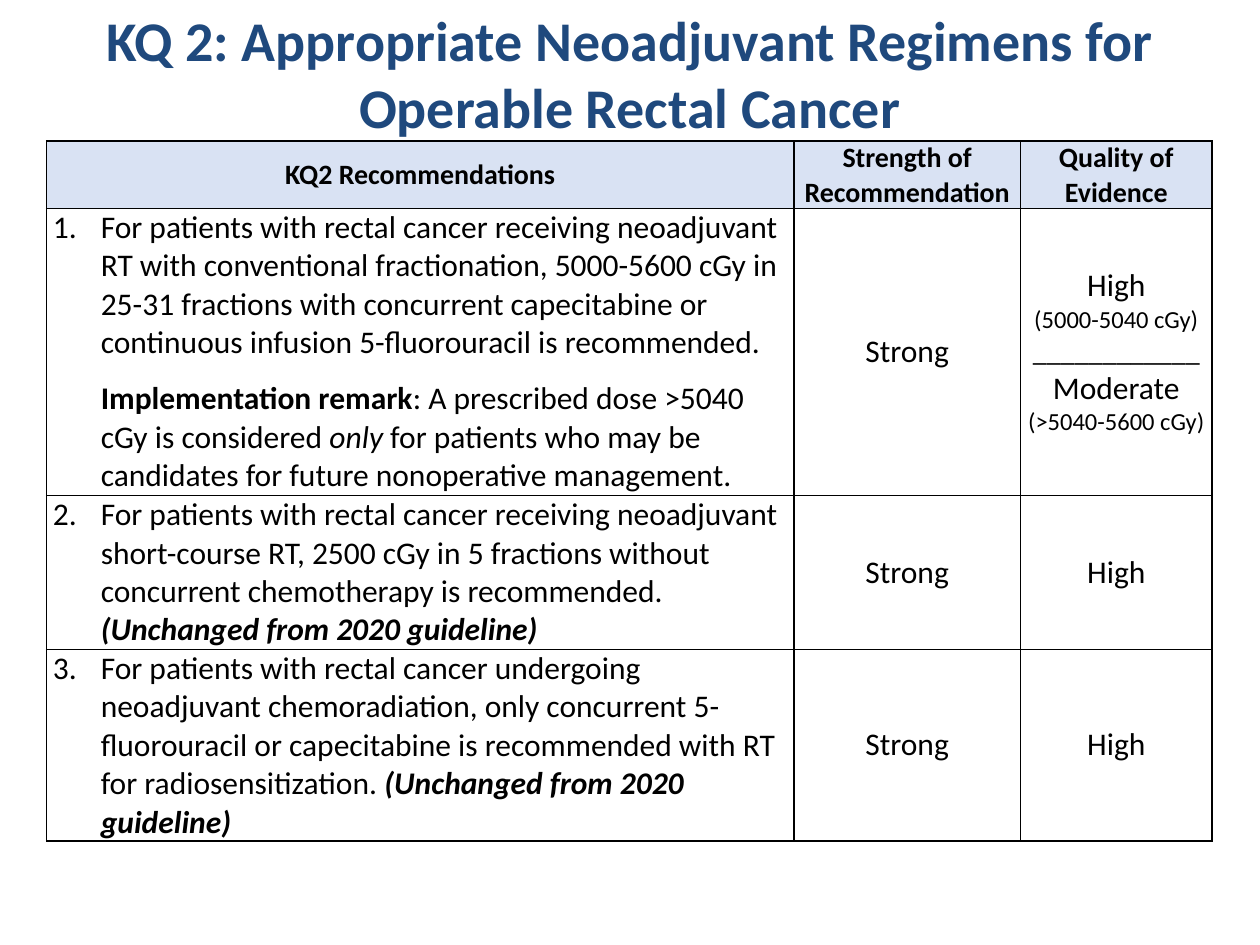
import pptx
import pptx.dml.color
import pptx.enum.text
import pptx.util
from lxml import etree
from pptx.oxml.ns import qn

Inches = pptx.util.Inches
Pt = pptx.util.Pt
CENTER = pptx.enum.text.PP_ALIGN.CENTER
LEFT = pptx.enum.text.PP_ALIGN.LEFT
MIDDLE = pptx.enum.text.MSO_ANCHOR.MIDDLE
TOP = pptx.enum.text.MSO_ANCHOR.TOP


def color(value):
    return pptx.dml.color.RGBColor.from_string(value)


class SlideBuilder:
    font = "Calibri"
    navy, black, header_fill = "1F497D", "000000", "D9E2F3"
    body_size, header_size = 18, 16

    def __init__(self, slide):
        self.slide = slide

    def add_span(self, para, text, size, ink=black, bold=False, italic=False):
        span = para.add_run()
        span.text = text
        span.font.name = self.font
        span.font.size = Pt(size)
        span.font.bold = bold
        span.font.italic = italic
        span.font.color.rgb = color(ink)

    def add_title(self, text, left, top, width, height):
        box = self.slide.shapes.add_textbox(
            Inches(left), Inches(top), Inches(width), Inches(height))
        frame = box.text_frame
        frame.word_wrap = True
        frame.vertical_anchor = MIDDLE
        para = frame.paragraphs[0]
        para.alignment = CENTER
        self.add_span(para, text, 32, self.navy, bold=True)

    def add_table(self, left, top, widths, heights):
        frame = self.slide.shapes.add_table(
            len(heights), len(widths), Inches(left), Inches(top),
            Inches(sum(widths)), Inches(sum(heights)))
        table = frame.table
        table.horz_banding = False
        for column, width in zip(table.columns, widths):
            column.width = Inches(width)
        for row, height in zip(table.rows, heights):
            row.height = Inches(height)
        return table

    def style_cell(self, cell, anchor=MIDDLE, fill=None):
        cell.margin_left = cell.margin_right = Inches(0.05)
        cell.margin_top = cell.margin_bottom = 0
        cell.vertical_anchor = anchor
        properties = cell._tc.get_or_add_tcPr()
        for side in ("a:lnL", "a:lnR", "a:lnT", "a:lnB"):
            line = etree.SubElement(properties, qn(side), w=str(Pt(1)))
            solid = etree.SubElement(line, qn("a:solidFill"))
            etree.SubElement(solid, qn("a:srgbClr"), val=self.black)
        if fill:
            cell.fill.solid()
            cell.fill.fore_color.rgb = color(fill)
        else:
            cell.fill.background()

    def fill_centered(self, cell, lines, bold=False, fill=None):
        self.style_cell(cell, fill=fill)
        frame = cell.text_frame
        for index, (text, size) in enumerate(lines):
            para = frame.add_paragraph() if index else frame.paragraphs[0]
            para.alignment = CENTER
            self.add_span(para, text, size, bold=bold)

    def fill_recommendation(self, cell, number, paragraphs):
        self.style_cell(cell, TOP)
        frame = cell.text_frame
        for index, spans in enumerate(paragraphs):
            para = frame.add_paragraph() if index else frame.paragraphs[0]
            para.alignment = LEFT
            properties = para._p.get_or_add_pPr()
            properties.set("marL", str(Inches(0.38)))
            if index:
                properties.set("indent", "0")
                para.space_before = Pt(10)
            else:
                properties.set("indent", str(Inches(-0.38)))
                etree.SubElement(properties, qn("a:buFont"), typeface="+mj-lt")
                etree.SubElement(properties, qn("a:buAutoNum"),
                                 type="arabicPeriod", startAt=str(number))
            for text, bold, italic in spans:
                self.add_span(para, text, self.body_size, bold=bold, italic=italic)


UNCHANGED = ("(Unchanged from 2020 guideline)", True, True)
HEADERS = ["KQ2 Recommendations", "Strength of Recommendation", "Quality of Evidence"]
HIGH = [("High", 18)]

# Each row: paragraphs of (text, bold, italic), then lines of evidence quality
RECOMMENDATIONS = [
    ([[("For patients with rectal cancer receiving neoadjuvant RT with conventional "
        "fractionation, 5000-5600 cGy in 25-31 fractions with concurrent capecitabine "
        "or continuous infusion 5-fluorouracil is recommended.", False, False)],
      [("Implementation remark", True, False),
       (": A prescribed dose >5040 cGy is considered ", False, False),
       ("only", False, True),
       (" for patients who may be candidates for future nonoperative management.",
        False, False)]],
     [("High", 18), ("(5000-5040 cGy)", 14), ("____________", 16),
      ("Moderate", 18), ("(>5040-5600 cGy)", 14)]),
    ([[("For patients with rectal cancer receiving neoadjuvant short-course RT, "
        "2500 cGy in 5 fractions without concurrent chemotherapy is recommended. ",
        False, False), UNCHANGED]], HIGH),
    ([[("For patients with rectal cancer undergoing neoadjuvant chemoradiation, only "
        "concurrent 5-fluorouracil or capecitabine is recommended with RT for "
        "radiosensitization. ", False, False), UNCHANGED]], HIGH),
]


def main():
    deck = pptx.Presentation()
    deck.slide_width, deck.slide_height = Inches(10), Inches(7.5)
    page = SlideBuilder(deck.slides.add_slide(deck.slide_layouts[6]))

    # Title
    page.add_title("KQ 2: Appropriate Neoadjuvant Regimens for Operable Rectal Cancer",
                   0.5, 0, 9, 1.15)

    # Recommendation table
    table = page.add_table(0.37, 1.12, [5.93, 1.8, 1.52], [0.53, 2.28, 1.22, 1.52])
    for column, header in enumerate(HEADERS):
        page.fill_centered(table.cell(0, column), [(header, page.header_size)],
                           bold=True, fill=page.header_fill)
    for number, (paragraphs, quality) in enumerate(RECOMMENDATIONS, start=1):
        page.fill_recommendation(table.cell(number, 0), number, paragraphs)
        page.fill_centered(table.cell(number, 1), [("Strong", page.body_size)])
        page.fill_centered(table.cell(number, 2), quality)

    deck.save("out.pptx")


if __name__ == "__main__":
    main()
